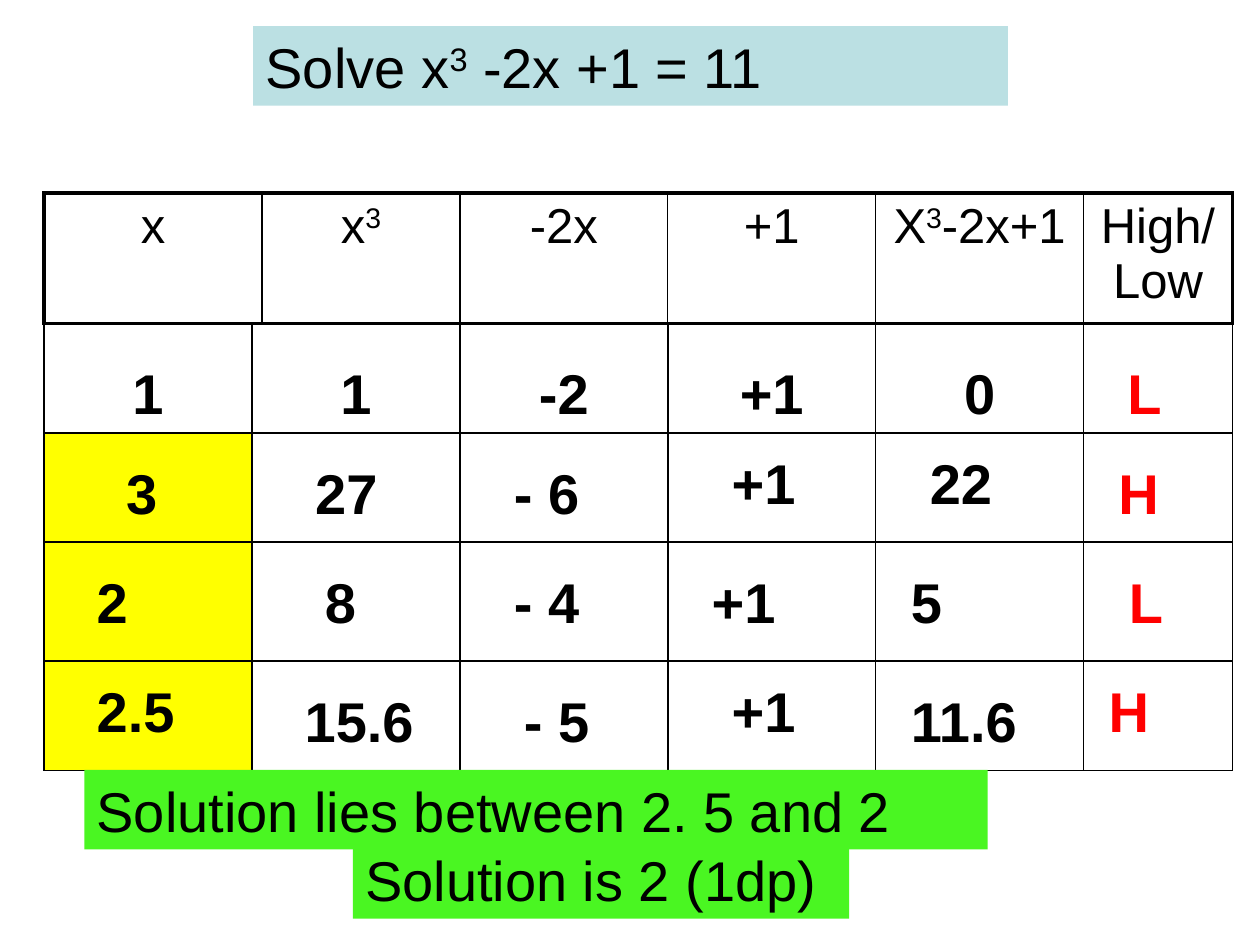
from dataclasses import dataclass

from lxml.etree import SubElement
from pptx import Presentation
from pptx.dml.color import RGBColor
from pptx.enum.shapes import MSO_SHAPE
from pptx.enum.text import MSO_ANCHOR, PP_ALIGN
from pptx.oxml.ns import qn
from pptx.util import Pt


@dataclass(frozen=True)
class Theme:
    font: str = "Arial"
    header_size: int = 28
    body_size: int = 32
    ink: str = "000000"
    verdict: str = "FF0000"
    trial: str = "FFFF00"
    question: str = "BBE0E3"
    answer: str = "4AF622"
    thin: float = 1
    thick: float = 2.25


THEME = Theme()
TABLE_LEFT = 25.2
COLUMNS = [118.8] * 5 + [85]
HEADER_COLUMNS = [124.6, 113] + COLUMNS[2:]
BOX_HEIGHT = 45.4

# "^" marks the start and end of a superscript
HEADERS = ["x", "x^3^", "-2x", "+1", "X^3^-2x+1", "High/Low"]
FIRST_TRIAL = ["1", "1", "-2", "+1", "0", "L"]

# Handwritten-style entries: text, left, top, width
ENTRIES = [
    [("3", 65, 258.5, 68), ("27", 173, 258.5, 68), ("- 6", 286.6, 258.5, 68),
     ("+1", 411, 252.7, 68), ("22", 524.2, 252.7, 68), ("H", 632, 258.5, 68)],
    [("2", 48.2, 321, 85), ("8", 178.6, 321, 62.6), ("- 4", 286.6, 321, 85),
     ("+1", 399.6, 321, 85), ("5", 513.4, 321, 85), ("L", 638, 321, 51)],
    [("2.5", 48.2, 383, 62.6), ("15.6", 167, 389, 85), ("- 5", 292.3, 389, 62.6),
     ("+1", 411, 383, 62.6), ("11.6", 513.4, 389, 96.5), ("H", 626.4, 383, 62.6)],
]

# Text, left, top, width, fill
BANNERS = [
    ("Solve x^3^ -2x +1 = 11", 144.7, 15, 431.3, THEME.question),
    ("Solution lies between 2. 5 and 2", 48.2, 440, 516.2, THEME.answer),
    ("Solution is 2 (1dp)", 201.6, 479.6, 283.7, THEME.answer),
]


def write(frame, text, size, color=THEME.ink, bold=False, align=PP_ALIGN.LEFT):
    para = frame.paragraphs[0]
    para.alignment = align
    para.font.name = THEME.font
    para.font.size = Pt(size)
    para.font.bold = bold
    para.font.color.rgb = RGBColor.from_string(color)
    for index, part in enumerate(text.split("^")):
        if part:
            span = para.add_run()
            span.text = part
            if index % 2:
                span.font._element.set("baseline", "30000")


def set_borders(cell, widths):
    """Draw the borders; widths are left, right, top, bottom."""
    properties = cell._tc.get_or_add_tcPr()
    for side, width in zip("LRTB", widths):
        line = SubElement(properties, qn(f"a:ln{side}"), w=str(Pt(width)))
        fill = SubElement(line, qn("a:solidFill"))
        SubElement(fill, qn("a:srgbClr"), val=THEME.ink)


def add_grid(page, top, columns, heights, framed=False):
    """Add an empty ruled table; a framed one has a thick outline."""
    shape = page.shapes.add_table(len(heights), len(columns), Pt(TABLE_LEFT), Pt(top),
                                  Pt(sum(columns)), Pt(sum(heights)))
    table = shape.table
    table.first_row = table.horz_banding = False
    for column, width in zip(table.columns, columns):
        column.width = Pt(width)
    outline = THEME.thick if framed else THEME.thin
    last = len(columns) - 1
    for row, height in zip(table.rows, heights):
        row.height = Pt(height)
        for index, cell in enumerate(row.cells):
            left = outline if index == 0 else THEME.thin
            right = outline if index == last else THEME.thin
            set_borders(cell, [left, right, outline, outline])
            cell.fill.background()
    return table


def highlight(cell):
    cell.fill.solid()
    cell.fill.fore_color.rgb = RGBColor.from_string(THEME.trial)


def add_entry(page, text, left, top, width):
    box = page.shapes.add_textbox(Pt(left), Pt(top), Pt(width), Pt(BOX_HEIGHT))
    box.text_frame.word_wrap = True
    color = THEME.verdict if text in ("H", "L") else THEME.ink
    write(box.text_frame, text, THEME.body_size, color, bold=True)


def add_banner(page, text, left, top, width, fill):
    box = page.shapes.add_shape(MSO_SHAPE.RECTANGLE, Pt(left), Pt(top),
                                Pt(width), Pt(BOX_HEIGHT))
    box.shadow.inherit = False
    box.fill.solid()
    box.fill.fore_color.rgb = RGBColor.from_string(fill)
    box.line.fill.background()
    box.text_frame.word_wrap = True
    box.text_frame.vertical_anchor = MSO_ANCHOR.TOP
    write(box.text_frame, text, THEME.body_size)


def add_header(page):
    table = add_grid(page, 110.2, HEADER_COLUMNS, [74.8], framed=True)
    for cell, text in zip(table.rows[0].cells, HEADERS):
        write(cell.text_frame, text, THEME.header_size, align=PP_ALIGN.CENTER)


def add_first_trials(page):
    table = add_grid(page, 185, COLUMNS, [62.4, 62.4])
    for cell, text in zip(table.rows[0].cells, FIRST_TRIAL):
        cell.vertical_anchor = MSO_ANCHOR.BOTTOM
        if text == "L":
            cell.margin_left = Pt(25)
            write(cell.text_frame, text, THEME.body_size, THEME.verdict, bold=True)
        else:
            write(cell.text_frame, text, THEME.body_size, bold=True,
                  align=PP_ALIGN.CENTER)
    highlight(table.cell(1, 0))


def add_later_trial(page, top, height):
    highlight(add_grid(page, top, COLUMNS, [height]).cell(0, 0))


def main():
    deck = Presentation()
    deck.slide_width, deck.slide_height = Pt(720), Pt(540)
    page = deck.slides.add_slide(deck.slide_layouts[6])

    # Ruled tables, stacked
    add_header(page)
    add_first_trials(page)
    add_later_trial(page, 309.8, 68)
    add_later_trial(page, 377.8, 62.4)

    # Entries over the empty rows
    for row in ENTRIES:
        for entry in row:
            add_entry(page, *entry)

    # Question and answers
    for banner in BANNERS:
        add_banner(page, *banner)

    deck.save("out.pptx")


if __name__ == "__main__":
    main()
